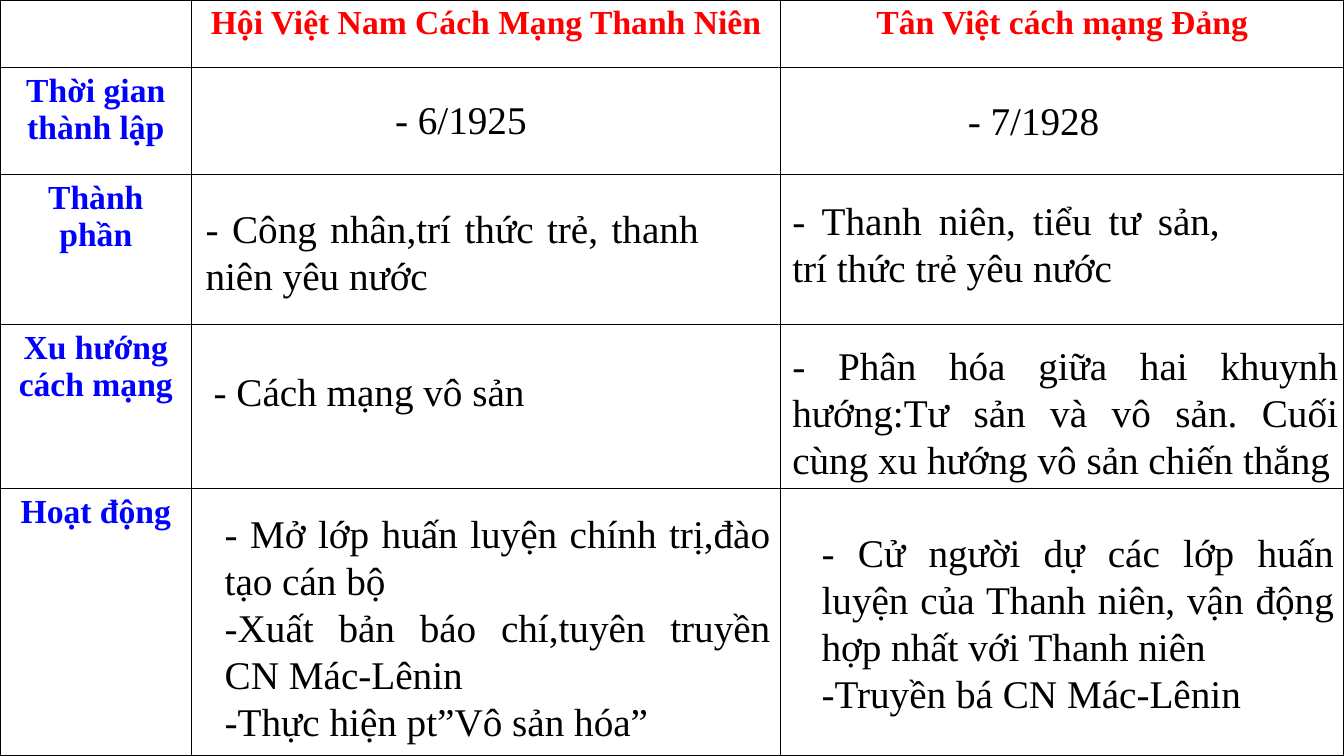
from itertools import accumulate

from pptx import Presentation
from pptx.dml.color import RGBColor
from pptx.enum.text import MSO_AUTO_SIZE, PP_ALIGN
from pptx.oxml import parse_xml
from pptx.oxml.ns import nsdecls
from pptx.util import Inches, Pt

FONT = "Times New Roman"
BLACK = RGBColor(0, 0, 0)
WHITE = RGBColor(255, 255, 255)
RED = RGBColor(255, 0, 0)
BLUE = RGBColor(0, 0, 255)

# Grid of the comparison, in inches
COLUMNS = [1.9, 5.84, 5.59]
ROWS = [0.67, 1.06, 1.49, 1.63, 2.65]
LEFTS = [0, *accumulate(COLUMNS)]
TOPS = [0, *accumulate(ROWS)]

ORGANISATIONS = ["Hội Việt Nam Cách Mạng Thanh Niên", "Tân Việt cách mạng Đảng"]
CRITERIA = ["Thời gian thành lập", "Thành phần", "Xu hướng cách mạng", "Hoạt động"]

# Row, column, offset in the cell (x, y), size (width, height), wrap, paragraphs
ANSWERS = [
    (4, 1, 0.23, 0.15, 5.61, 2.46, True,
     ["- Mở lớp huấn luyện chính trị,đào tạo cán bộ",
      "-Xuất bản báo chí,tuyên truyền CN Mác-Lênin",
      "-Thực hiện pt”Vô sản hóa”"]),
    (4, 2, 0.31, 0.34, 5.28, 1.99, True,
     ["- Cử người dự các lớp huấn luyện của Thanh niên, vận động hợp nhất với Thanh niên",
      "-Truyền bá CN Mác-Lênin"]),
    (3, 2, 0.02, 0.12, 5.61, 1.51, True,
     ["- Phân hóa giữa hai khuynh hướng:Tư sản và vô sản. "
      "Cuối cùng xu hướng vô sản chiến thắng"]),
    (3, 1, 0.12, 0.37, 3.32, 0.57, False, ["- Cách mạng vô sản"]),
    (2, 1, 0.04, 0.25, 5.09, 1.04, True, ["- Công nhân,trí thức trẻ, thanh niên yêu nước"]),
    (2, 2, 0.02, 0.17, 4.44, 1.04, True, ["- Thanh niên, tiểu tư sản, trí thức trẻ yêu nước"]),
    (1, 2, 1.76, 0.24, 1.52, 0.57, False, ["- 7/1928"]),
    (1, 1, 1.92, 0.23, 1.52, 0.57, False, ["- 6/1925"]),
]


def style_paragraph(paragraph, size, color, alignment, bold=False):
    paragraph.alignment = alignment
    paragraph.font.name = FONT
    paragraph.font.size = Pt(size)
    paragraph.font.bold = bold
    paragraph.font.color.rgb = color


def style_cell(cell):
    """Black one-point borders around a white cell."""
    properties = cell._tc.get_or_add_tcPr()
    for side in ("lnL", "lnR", "lnT", "lnB"):
        properties.append(parse_xml(
            f'<a:{side} {nsdecls("a")} w="12700"><a:solidFill>'
            f'<a:srgbClr val="{BLACK}"/></a:solidFill></a:{side}>'))
    cell.fill.solid()
    cell.fill.fore_color.rgb = WHITE


def add_comparison_table(slide, left, top, width, height):
    table = slide.shapes.add_table(
        len(ROWS), len(COLUMNS), left, top, width, height).table
    for column, share in zip(table.columns, COLUMNS):
        column.width = int(width * share / sum(COLUMNS))
    for row, share in zip(table.rows, ROWS):
        row.height = int(height * share / sum(ROWS))
    for cell in table.iter_cells():
        style_cell(cell)

    # Column and row headings
    headings = [(0, column, text, RED) for column, text in enumerate(ORGANISATIONS, 1)]
    headings += [(row, 0, text, BLUE) for row, text in enumerate(CRITERIA, 1)]
    for row, column, text, color in headings:
        cell = table.cell(row, column)
        cell.text = text
        style_paragraph(cell.text_frame.paragraphs[0], 24, color, PP_ALIGN.CENTER, bold=True)


def add_answer(slide, row, column, x, y, width, height, wrap, texts):
    """Text box placed relative to the corner of its table cell."""
    box = slide.shapes.add_textbox(
        Inches(LEFTS[column] + x), Inches(TOPS[row] + y), Inches(width), Inches(height))
    frame = box.text_frame
    frame.word_wrap = wrap
    frame.auto_size = MSO_AUTO_SIZE.SHAPE_TO_FIT_TEXT
    for index, text in enumerate(texts):
        paragraph = frame.add_paragraph() if index else frame.paragraphs[0]
        paragraph.text = text
        style_paragraph(paragraph, 28, BLACK, PP_ALIGN.JUSTIFY)


def main():
    presentation = Presentation()
    presentation.slide_width = Inches(13.33)
    presentation.slide_height = Inches(7.5)
    slide = presentation.slides.add_slide(presentation.slide_layouts[6])
    add_comparison_table(slide, 0, 0, presentation.slide_width, presentation.slide_height)
    for answer in ANSWERS:
        add_answer(slide, *answer)
    presentation.save("out.pptx")


if __name__ == "__main__":
    main()
